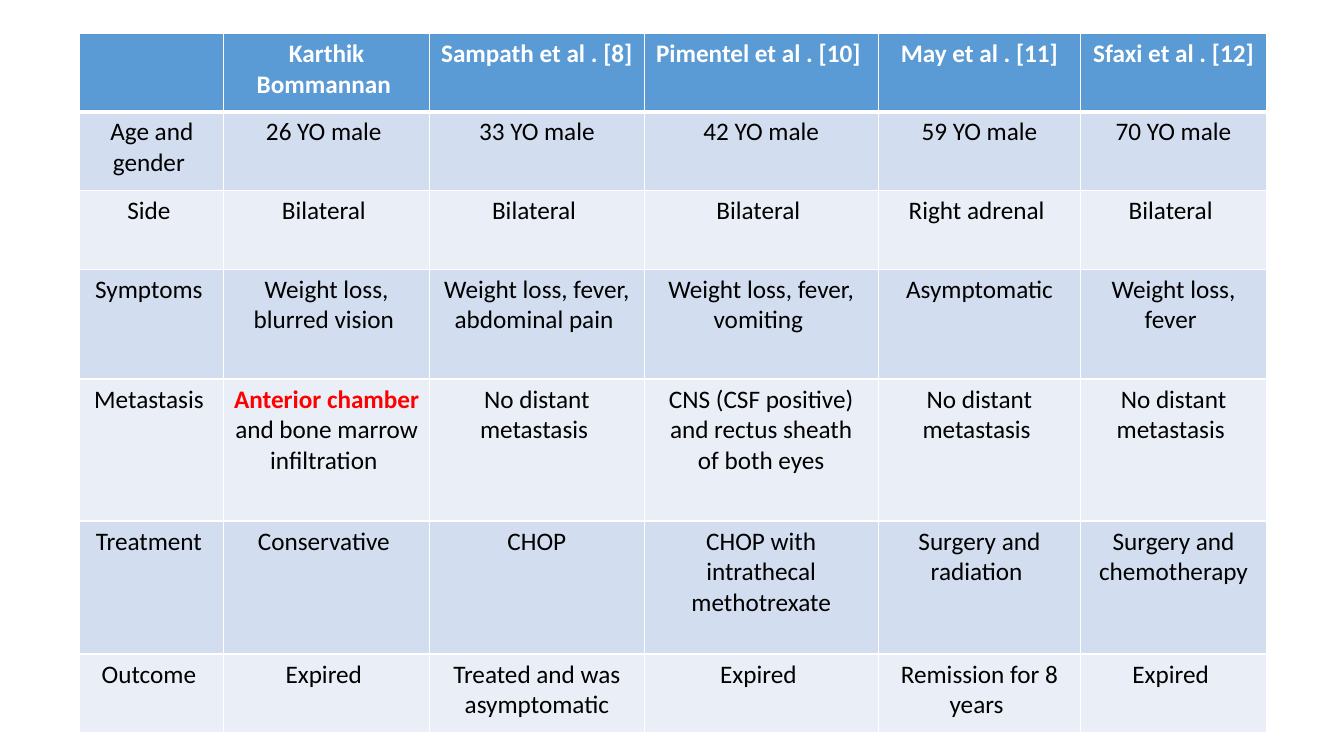
"""Build a slide with a table comparing published adrenal lymphoma cases."""
from lxml import etree
from pptx import Presentation
from pptx import util as u
from pptx.dml.color import RGBColor
from pptx.enum import text
from pptx.oxml.ns import qn

WHITE = RGBColor(0xFF, 0xFF, 0xFF)
BLACK = RGBColor(0x00, 0x00, 0x00)
RED = RGBColor(0xFF, 0x00, 0x00)
BLUE = RGBColor(0x5B, 0x9B, 0xD5)
BANDS = [RGBColor(0xEA, 0xEF, 0xF7), RGBColor(0xD2, 0xDE, 0xEF)]

HIGHLIGHT = "Anterior chamber "
COLS = [1.43, 2.04, 2.13, 2.32, 2.01, 1.84]
ROWS = [0.78, 0.78, 0.78, 1.09, 1.41, 1.32, 0.78]
CASES = [
    ["", "Karthik Bommannan ", "Sampath et al . [8]", "Pimentel et al . [10] ",
     "May et al . [11]", "Sfaxi et al . [12] "],
    ["Age and gender ", "26 YO male ", "33 YO male", "42 YO male", "59 YO male", "70 YO male"],
    ["Side ", "Bilateral ", "Bilateral ", "Bilateral ", "Right adrenal ", "Bilateral "],
    ["Symptoms ", "Weight loss, blurred vision ", "Weight loss, fever, abdominal pain ",
     "Weight loss, fever, vomiting ", "Asymptomatic", "Weight loss, fever "],
    ["Metastasis ", HIGHLIGHT + "and bone marrow infiltration ", "No distant metastasis ",
     "CNS (CSF positive) and rectus sheath\vof both eyes", "No distant metastasis ",
     "No distant metastasis "],
    ["Treatment ", "Conservative ", "CHOP", "CHOP with intrathecal methotrexate",
     "Surgery and radiation ", "Surgery and chemotherapy"],
    ["Outcome ", "Expired ", "Treated and was asymptomatic", "Expired ",
     "Remission for 8 years ", "Expired "],
]


def add_borders(cell, widths):
    """Give the cell white borders; widths maps each side to points."""
    tcPr = cell._tc.get_or_add_tcPr()
    for side, width in widths.items():
        ln = etree.SubElement(tcPr, qn(f"a:ln{side}"), w=str(u.Pt(width)))
        fill = etree.SubElement(ln, qn("a:solidFill"))
        etree.SubElement(fill, qn("a:srgbClr"), val=str(WHITE))


def format_font(font, **values):
    """Set each given value, and the colour, on a font."""
    font.color.rgb = values.pop("color")
    for name, value in values.items():
        setattr(font, name, value)


prs = Presentation()
prs.slide_width, prs.slide_height = u.Inches(13.33), u.Inches(7.5)
s = prs.slides.add_slide(prs.slide_layouts[6])

table = s.shapes.add_table(
    len(ROWS), len(COLS), u.Inches(0.79), u.Inches(0.33),
    u.Inches(sum(COLS)), u.Inches(sum(ROWS))).table
for column, width in zip(table.columns, COLS):
    column.width = u.Inches(width)

for i, (row, height, contents) in enumerate(zip(table.rows, ROWS, CASES)):
    row.height = u.Inches(height)
    header = i == 0
    for cell, content in zip(row.cells, contents):
        add_borders(cell, {"L": 1, "R": 1, "T": 3 if i == 1 else 1, "B": 3 if header else 1})
        cell.fill.solid()
        cell.fill.fore_color.rgb = BLUE if header else BANDS[i % 2]
        p = cell.text_frame.paragraphs[0]
        p.alignment = text.PP_ALIGN.CENTER
        if content.startswith(HIGHLIGHT):
            p.text = HIGHLIGHT
            p.add_run().text = content.removeprefix(HIGHLIGHT)
        else:
            p.text = content
        for r in p.runs:
            marked = r.text == HIGHLIGHT
            format_font(r.font, name="Calibri", size=u.Pt(18), bold=header or marked,
                        color=WHITE if header else RED if marked else BLACK)

prs.save("out.pptx")
